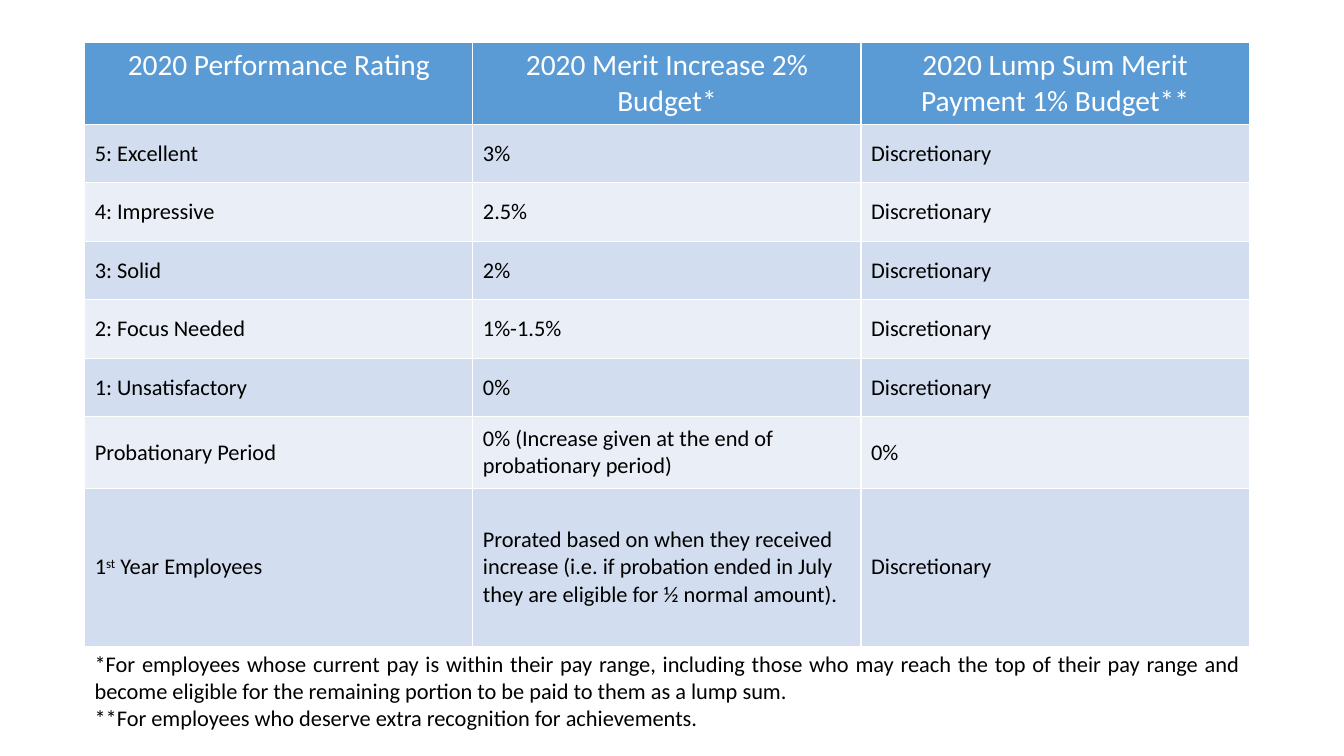
from pptx import Presentation
from pptx.dml.color import RGBColor
from pptx.enum import text
from pptx.util import Inches, Pt

COLORS = {"head": "5B9BD5", "odd": "D2DEEF", "even": "EAEFF7",
          "white": "FFFFFF", "black": "000000"}
FONT = "Calibri"
HEADS = ["2020 Performance Rating", "2020 Merit Increase 2% Budget*",
         "2020 Lump Sum Merit Payment 1% Budget**"]
# A tuple holds the runs of a cell: plain, superscript, plain.
RATINGS = [
    ["5: Excellent", "3%", "Discretionary"],
    ["4: Impressive", "2.5%", "Discretionary"],
    ["3: Solid", "2%", "Discretionary"],
    ["2: Focus Needed", "1%-1.5%", "Discretionary"],
    ["1: Unsatisfactory", "0%", "Discretionary"],
    ["Probationary Period",
     "0% (Increase given at the end of probationary period)", "0%"],
    [("1", "st", " Year Employees"),
     "Prorated based on when they received increase (i.e. if probation ended "
     "in July they are eligible for ½ normal amount).", "Discretionary"],
]
NOTES = [
    "*For employees whose current pay is within their pay range, including "
    "those who may reach the top of their pay range and become eligible for "
    "the remaining portion to be paid to them as a lump sum.",
    "**For employees who deserve extra recognition for achievements.",
]
HEIGHTS = [0.81] + [0.58] * 5 + [0.71, 1.57]
COL_WIDTH = 3.85


def style(para, size, color, align):
    para.alignment = align
    for run in para.runs:
        run.font.name = FONT
        run.font.size = Pt(size)
        run.font.bold = False
        run.font.color.rgb = RGBColor.from_string(COLORS[color])


def fill_cell(cell, words, row):
    para = cell.text_frame.paragraphs[0]
    parts = words if isinstance(words, tuple) else (words,)
    for i, part in enumerate(parts):
        run = para.add_run()
        run.text = part
        if i == 1:
            run.font._element.set("baseline", "30000")
    cell.fill.solid()
    if row == 0:
        band = "head"
        style(para, 21, "white", text.PP_ALIGN.CENTER)
    else:
        band = "odd" if row % 2 else "even"
        cell.vertical_anchor = text.MSO_ANCHOR.MIDDLE
        style(para, 16, "black", text.PP_ALIGN.LEFT)
    cell.fill.fore_color.rgb = RGBColor.from_string(COLORS[band])


def add_ratings(slide):
    rows = [HEADS] + RATINGS
    table = slide.shapes.add_table(
        len(rows), len(HEADS), Inches(0.84), Inches(0.42),
        Inches(COL_WIDTH * len(HEADS)), Inches(sum(HEIGHTS))).table
    for col in table.columns:
        col.width = Inches(COL_WIDTH)
    for r, (row, height) in enumerate(zip(rows, HEIGHTS)):
        table.rows[r].height = Inches(height)
        for c, words in enumerate(row):
            fill_cell(table.cell(r, c), words, r)


def add_notes(slide):
    box = slide.shapes.add_textbox(Inches(0.84), Inches(6.4),
                                   Inches(11.56), Inches(0.91))
    frame = box.text_frame
    frame.word_wrap = True
    frame.auto_size = text.MSO_AUTO_SIZE.SHAPE_TO_FIT_TEXT
    frame.text = "\n".join(NOTES)
    for para in frame.paragraphs:
        style(para, 16, "black", text.PP_ALIGN.JUSTIFY)


def main():
    deck = Presentation()
    deck.slide_width, deck.slide_height = Inches(13.33), Inches(7.5)
    slide = deck.slides.add_slide(deck.slide_layouts[6])
    add_ratings(slide)
    add_notes(slide)
    deck.save("out.pptx")


if __name__ == "__main__":
    main()
